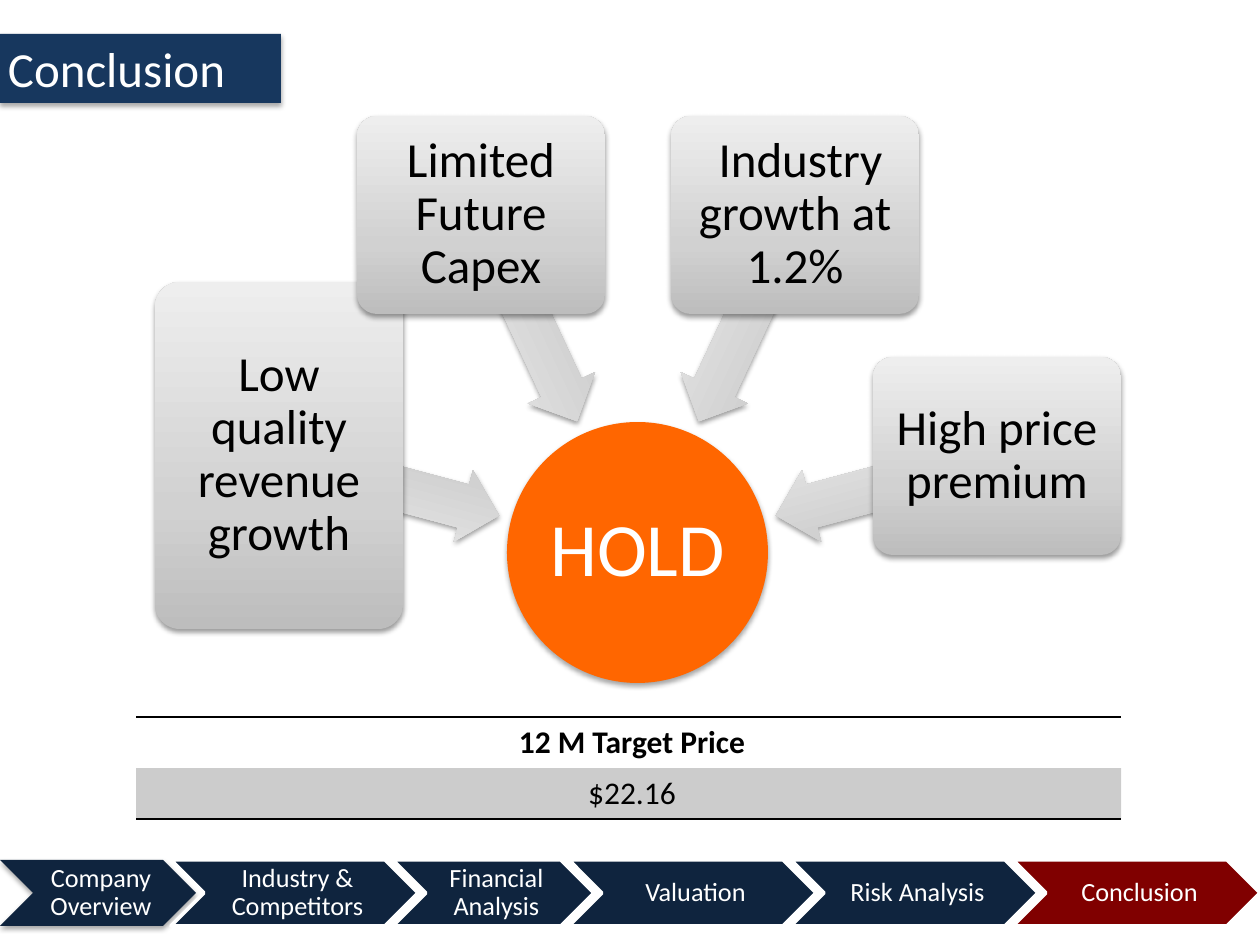
import copy
from dataclasses import dataclass
from typing import Any, Optional

import pptx
import pptx.dml.color
import pptx.enum.shapes
import pptx.enum.text
import pptx.oxml
import pptx.oxml.ns
import pptx.util
from lxml import etree

PX = 914400 / 126
MSO = pptx.enum.shapes.MSO_SHAPE
ALIGN = pptx.enum.text.PP_ALIGN
ANCHOR = pptx.enum.text.MSO_ANCHOR
qn = pptx.oxml.ns.qn


@dataclass(frozen=True)
class Theme:
    font: str = "Calibri"
    white: str = "FFFFFF"
    black: str = "000000"
    band: str = "17375E"
    step: str = "0F243E"
    current: str = "800000"
    verdict: str = "FF6600"
    metal: tuple = ((0, "BDBDBD"), (0.35, "D1D1D1"), (1, "EEEEEE"))
    heading: int = 28
    verdict_size: int = 43
    table_size: int = 18
    step_size: int = 15


@dataclass(frozen=True)
class Box:
    x: int
    y: int
    w: int
    h: int

    def emu(self) -> list[int]:
        return [round(v * PX) for v in (self.x, self.y, self.w, self.h)]


@dataclass(frozen=True)
class Reason:
    text: str
    card: Box
    arrow: Box
    angle: int


@dataclass(frozen=True)
class Step:
    text: str
    w: int


T = Theme()

REASONS = [
    Reason("Low quality revenue growth", Box(155, 282, 248, 347), Box(275, 449, 228, 74), 195),
    Reason("Limited Future Capex", Box(357, 116, 248, 198), Box(415, 281, 228, 74), 245),
    Reason(" Industry growth at 1.2%", Box(671, 116, 248, 198), Box(633, 281, 228, 74), 295),
    Reason("High price premium", Box(873, 357, 248, 198), Box(772, 449, 228, 74), 345),
]
STEPS = [
    Step("Company Overview", 196),
    Step("Industry & Competitors", 247),
    Step("Financial Analysis", 201),
    Step("Valuation", 247),
    Step("Risk Analysis", 247),
    Step("Conclusion", 247),
]
STEP_OVERLAP = 25


def rgb(color: str) -> pptx.dml.color.RGBColor:
    return pptx.dml.color.RGBColor.from_string(color)


def apply(target: Any, values: dict[str, Any]) -> None:
    for name, value in values.items():
        setattr(target, name, value)


def write(tf: Any, text: str, size: int, color: str, align: Any = ALIGN.CENTER,
          spacing: float = 0.9, bold: bool = False) -> None:
    p = tf.paragraphs[0]
    apply(p, {"alignment": align, "line_spacing": spacing})
    r = p.add_run()
    r.text = text
    apply(r.font, {"name": T.font, "size": pptx.util.Pt(size), "bold": bold})
    r.font.color.rgb = rgb(color)


def inset(tf: Any, left: int, top: int, right: int, bottom: int, anchor: Any) -> None:
    apply(tf, {"margin_left": round(left * PX), "margin_top": round(top * PX),
               "margin_right": round(right * PX), "margin_bottom": round(bottom * PX),
               "word_wrap": True, "vertical_anchor": anchor})


def add_shadow(sp: Any, opacity: int, distance: float) -> None:
    effects = sp.element.spPr.find(qn("a:effectLst"))
    effects.append(pptx.oxml.parse_xml(
        f'<a:outerShdw {pptx.oxml.ns.nsdecls("a")} blurRad="{round(3.1 * 12700)}" '
        f'dist="{round(distance * 12700)}" dir="5400000" rotWithShape="0">'
        f'<a:srgbClr val="{T.black}"><a:alpha val="{opacity * 1000}"/></a:srgbClr>'
        '</a:outerShdw>'))


def add_shape(s: Any, kind: Any, box: Box, fill: Optional[str] = None,
              line: Optional[str] = None) -> Any:
    """Add a preset shape; without a fill colour it gets the metal gradient."""
    sp = s.shapes.add_shape(kind, *box.emu())
    sp.shadow.inherit = False
    if fill:
        sp.fill.solid()
        sp.fill.fore_color.rgb = rgb(fill)
    else:
        sp.fill.gradient()
        sp.fill.gradient_angle = 90
        stops = sp.element.spPr.find(".//" + qn("a:gsLst"))
        stops.append(copy.deepcopy(stops[0]))
        for stop, (position, color) in zip(sp.fill.gradient_stops, T.metal):
            stop.position = position
            stop.color.rgb = rgb(color)
    if line:
        sp.line.color.rgb = rgb(line)
        sp.line.width = pptx.util.Pt(2)
    else:
        sp.line.fill.background()
    return sp


def add_title(s: Any, text: str) -> None:
    band = add_shape(s, MSO.RECTANGLE, Box(0, 34, 281, 69), T.band)
    add_shadow(band, 35, 1.8)
    title = s.shapes.title
    apply(title, dict(zip(("left", "top", "width", "height"), Box(-5, 32, 286, 72).emu())))
    inset(title.text_frame, 13, 6, 13, 6, ANCHOR.TOP)
    title.text_frame.auto_size = pptx.enum.text.MSO_AUTO_SIZE.NONE
    write(title.text_frame, text, T.heading, T.white, ALIGN.LEFT, 1.0)
    band.element.addnext(title.element)


def add_verdict(s: Any, text: str) -> None:
    sp = add_shape(s, MSO.OVAL, Box(507, 422, 261, 261), T.verdict)
    add_shadow(sp, 35, 1.8)
    inset(sp.text_frame, 3, 3, 3, 3, ANCHOR.MIDDLE)
    write(sp.text_frame, text, T.verdict_size, T.white)


def add_reason(s: Any, reason: Reason) -> None:
    arrow = add_shape(s, MSO.LEFT_ARROW, reason.arrow)
    arrow.adjustments[0], arrow.adjustments[1] = 0.6, 0.5
    arrow.rotation = reason.angle
    card = add_shape(s, MSO.ROUNDED_RECTANGLE, reason.card)
    card.adjustments[0] = 0.1
    inset(card.text_frame, 10, 10, 10, 10, ANCHOR.MIDDLE)
    write(card.text_frame, reason.text, T.heading, T.black)
    for sp in (arrow, card):
        add_shadow(sp, 38, 1.6)


def add_border(cell: Any, side: str) -> None:
    cell._tc.get_or_add_tcPr().insert(0, pptx.oxml.parse_xml(
        f'<a:{side} {pptx.oxml.ns.nsdecls("a")} w="12700"><a:solidFill>'
        f'<a:srgbClr val="{T.black}"/></a:solidFill></a:{side}>'))


def add_price_table(s: Any, label: str, price: str) -> None:
    tbl = s.shapes.add_table(2, 1, *Box(136, 717, 985, 102).emu()).table
    apply(tbl, {"first_row": False, "horz_banding": False})
    # "No Style, No Grid"
    tbl._tbl.tblPr.find(qn("a:tableStyleId")).text = "{2D5ABB26-0587-4C30-8999-92F81FD0307C}"
    head, value = tbl.cell(0, 0), tbl.cell(1, 0)
    for cell, text, bold in ((head, label, True), (value, price, False)):
        write(cell.text_frame, text, T.table_size, T.black, spacing=1.0, bold=bold)
    head.fill.background()
    value.fill.solid()
    value.fill.fore_color.rgb = rgb(T.black)
    tint = value._tc.tcPr.find(".//" + qn("a:srgbClr"))
    etree.SubElement(tint, qn("a:alpha")).set("val", "20000")
    add_border(head, "lnT")
    add_border(value, "lnB")


def add_steps(s: Any, steps: list[Step]) -> None:
    x = 0
    for i, step in enumerate(steps):
        fill = T.current if step is steps[-1] else T.step
        sp = add_shape(s, MSO.CHEVRON, Box(x, 860, step.w, 66), fill, T.white if i else None)
        if i == 0:
            add_shadow(sp, 35, 1.8)
        inset(sp.text_frame, 9, 3, 3, 3, ANCHOR.MIDDLE)
        write(sp.text_frame, step.text, T.step_size, T.white)
        x += step.w - STEP_OVERLAP


def main() -> None:
    prs = pptx.Presentation()
    prs.slide_width, prs.slide_height = pptx.util.Inches(10), pptx.util.Inches(7.5)
    s = prs.slides.add_slide(prs.slide_layouts[5])
    add_title(s, "Conclusion")
    # Verdict with the reasons pointing at it
    add_verdict(s, "HOLD")
    for reason in REASONS:
        add_reason(s, reason)
    add_price_table(s, " 12 M Target Price", " $22.16")
    # Progress bar
    add_steps(s, STEPS)
    prs.save("out.pptx")


if __name__ == "__main__":
    main()
